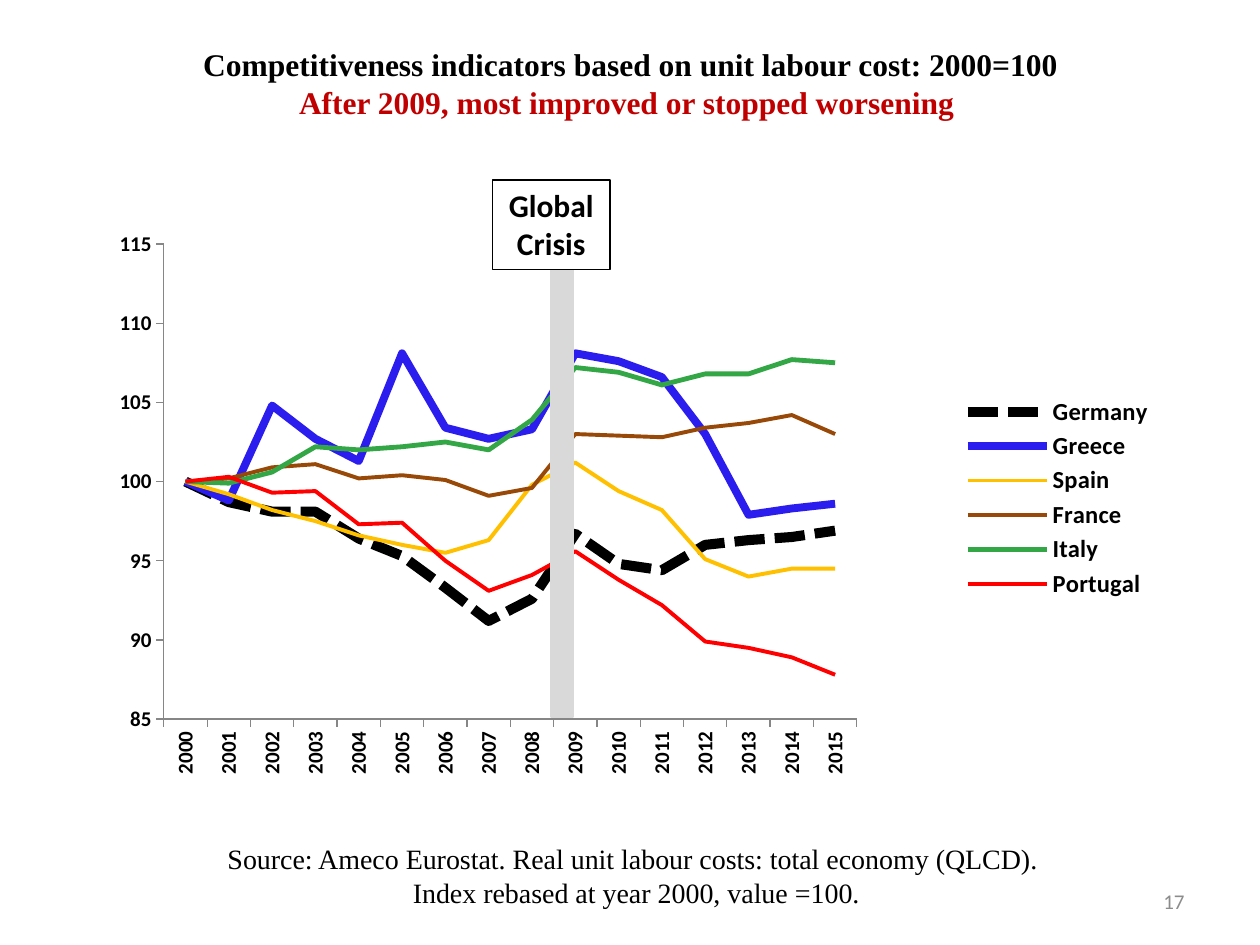
from lxml import etree
from pptx import Presentation
from pptx.chart.data import CategoryChartData
from pptx.dml.color import RGBColor
from pptx.enum.chart import XL_CHART_TYPE, XL_LEGEND_POSITION, XL_TICK_MARK
from pptx.enum.dml import MSO_LINE
from pptx.enum.shapes import MSO_SHAPE
from pptx.enum.text import MSO_ANCHOR, PP_ALIGN
from pptx.oxml.ns import qn
from pptx.util import Pt

LINE_CHART = XL_CHART_TYPE.LINE
LEGEND_RIGHT = XL_LEGEND_POSITION.RIGHT
TICK_OUTSIDE, TICK_NONE = XL_TICK_MARK.OUTSIDE, XL_TICK_MARK.NONE
DASHED = MSO_LINE.SQUARE_DOT
RECTANGLE = MSO_SHAPE.RECTANGLE
TOP, MIDDLE = MSO_ANCHOR.TOP, MSO_ANCHOR.MIDDLE
CENTER, RIGHT = PP_ALIGN.CENTER, PP_ALIGN.RIGHT

SERIF, SANS = "Times New Roman", "Calibri"
BLACK, WHITE, DARK_RED = "000000", "FFFFFF", "C00000"
BAND_GRAY, AXIS_GRAY, NUMBER_GRAY = "D9D9D9", "868686", "8C8C8C"

YEARS = [str(year) for year in range(2000, 2016)]
# country, line colour, line width, index values
COUNTRIES = [
    ("Germany", BLACK, 5.75, [100, 98.7, 98.1, 98.1, 96.4, 95.3, 93.3, 91.2,
                              92.6, 96.7, 94.8, 94.4, 96, 96.3, 96.5, 96.9]),
    ("Greece", "2C1DEF", 4.5, [100, 98.8, 104.8, 102.7, 101.3, 108.1, 103.4, 102.7,
                               103.3, 108.1, 107.6, 106.6, 103, 97.9, 98.3, 98.6]),
    ("Spain", "FFC000", 2.25, [100, 99.2, 98.2, 97.5, 96.6, 96, 95.5, 96.3,
                               99.8, 101.2, 99.4, 98.2, 95.1, 94, 94.5, 94.5]),
    ("France", "984807", 2.25, [100, 100.2, 100.9, 101.1, 100.2, 100.4, 100.1, 99.1,
                                99.6, 103, 102.9, 102.8, 103.4, 103.7, 104.2, 103]),
    ("Italy", "33A746", 2.75, [100, 99.9, 100.6, 102.2, 102, 102.2, 102.5, 102,
                               103.9, 107.2, 106.9, 106.1, 106.8, 106.8, 107.7, 107.5]),
    ("Portugal", "FF0000", 2.25, [100, 100.3, 99.3, 99.4, 97.3, 97.4, 95, 93.1,
                                  94.1, 95.6, 93.8, 92.2, 89.9, 89.5, 88.9, 87.8]),
]


def color(hex_string):
    return RGBColor.from_string(hex_string)


def set_font(font, name, size, hex_string, bold=False):
    font.name, font.size, font.bold = name, Pt(size), bold
    font.color.rgb = color(hex_string)


def write_lines(shape, lines, name, size, bold=False, align=CENTER, anchor=TOP):
    """Write one paragraph for each (text, colour) pair."""
    frame = shape.text_frame
    frame.word_wrap = True
    frame.vertical_anchor = anchor
    frame.text = "\n".join(text for text, _ in lines)
    for paragraph, (_, hex_string) in zip(frame.paragraphs, lines):
        paragraph.alignment = align
        for run in paragraph.runs:
            set_font(run.font, name, size, hex_string, bold)


def add_text(slide, box, lines, name, size, **style):
    shape = slide.shapes.add_textbox(*map(Pt, box))
    write_lines(shape, lines, name, size, **style)


def add_rectangle(slide, box, fill, outline, width):
    shape = slide.shapes.add_shape(RECTANGLE, *map(Pt, box))
    shape.shadow.inherit = False
    shape.fill.solid()
    shape.fill.fore_color.rgb = color(fill)
    shape.line.color.rgb = color(outline)
    shape.line.width = Pt(width)
    return shape


def set_layout(element, index, fractions, inner=False):
    """Place a chart part by its x, y, w, h as fractions of the chart."""
    for old_layout in element.findall(qn("c:layout")):
        element.remove(old_layout)
    layout = etree.Element(qn("c:layout"))
    manual = etree.SubElement(layout, qn("c:manualLayout"))
    settings = [("layoutTarget", "inner")] if inner else []
    settings += [("xMode", "edge"), ("yMode", "edge")]
    settings += list(zip("xywh", fractions))
    for tag, value in settings:
        etree.SubElement(manual, qn("c:" + tag)).set("val", str(value))
    element.insert(index, layout)


def style_axis(axis):
    axis.has_major_gridlines = False
    axis.major_tick_mark = TICK_OUTSIDE
    axis.minor_tick_mark = TICK_NONE
    axis.format.line.color.rgb = color(AXIS_GRAY)
    axis.format.line.width = Pt(0.75)
    set_font(axis.tick_labels.font, SANS, 12, BLACK, bold=True)


def style_series(series, hex_string, width):
    series.smooth = False
    series.format.line.color.rgb = color(hex_string)
    series.format.line.width = Pt(width)


def add_cost_chart(slide, box):
    data = CategoryChartData(number_format="0.0")
    data.categories = YEARS
    for name, _, _, values in COUNTRIES:
        data.add_series(name, values)
    chart = slide.shapes.add_chart(LINE_CHART, *map(Pt, box), data).chart
    chart.has_title = False
    set_font(chart.font, SANS, 10, BLACK)
    plot = chart.plots[0]
    plot.vary_by_categories = False
    for series, (_, hex_string, width, _) in zip(plot.series, COUNTRIES):
        style_series(series, hex_string, width)
    plot.series[0].format.line.dash_style = DASHED

    for axis in (chart.category_axis, chart.value_axis):
        style_axis(axis)
    years_body = chart.category_axis._element.find(qn("c:txPr")).find(qn("a:bodyPr"))
    years_body.set("rot", "-5400000")
    years_body.set("vert", "horz")
    value_axis = chart.value_axis
    value_axis.minimum_scale, value_axis.maximum_scale = 85, 115
    value_axis.major_unit = 5
    value_axis.tick_labels.number_format = "0"
    value_axis.tick_labels.number_format_is_linked = False

    chart.has_legend = True
    legend = chart.legend
    legend.position = LEGEND_RIGHT
    legend.include_in_layout = False
    set_font(legend.font, SANS, 14, BLACK, bold=True)
    set_layout(legend._element, 1, (0.79, 0.32, 0.2, 0.36))
    plot_area = chart._chartSpace.chart.plotArea
    set_layout(plot_area, 0, (0.063, 0.066, 0.641, 0.813), inner=True)


def main():
    presentation = Presentation()
    presentation.slide_width, presentation.slide_height = Pt(720), Pt(540)
    slide = presentation.slides.add_slide(presentation.slide_layouts[6])

    add_text(slide, (516, 500.4, 168, 28.8), [("17", NUMBER_GRAY)], SANS, 12,
             align=RIGHT, anchor=MIDDLE)
    add_cost_chart(slide, (54.7, 117.4, 617.8, 334))
    add_text(slide, (43.2, 477.4, 640.8, 46),
             [("Source: Ameco Eurostat. Real unit labour costs: total economy (QLCD). ", BLACK),
              ("Index rebased at year 2000, value =100.", BLACK)], SERIF, 16)
    add_rectangle(slide, (315.4, 145.4, 11.5, 264.2), BAND_GRAY, BAND_GRAY, 2)
    crisis = add_rectangle(slide, (281.5, 103, 67, 51), WHITE, BLACK, 1)
    write_lines(crisis, [("Global", BLACK), ("Crisis", BLACK)], SANS, 18, bold=True)
    add_text(slide, (54.7, 22.3, 611.3, 51),
             [("Competitiveness indicators based on unit labour cost: 2000=100", BLACK),
              ("After 2009, most improved or stopped worsening ", DARK_RED)],
             SERIF, 18, bold=True)
    presentation.save("out.pptx")


if __name__ == "__main__":
    main()
